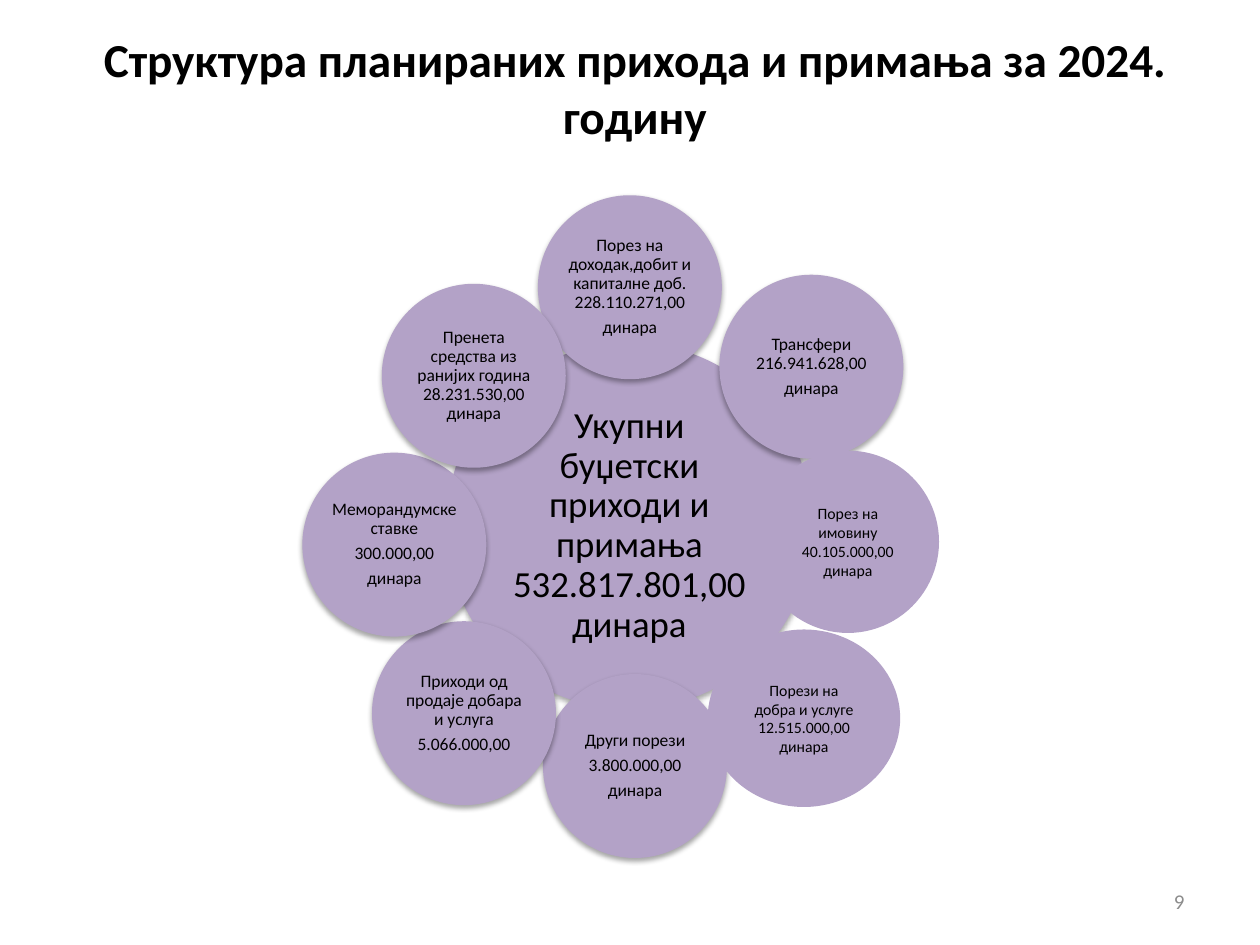
from dataclasses import dataclass

from lxml import etree
from pptx import Presentation
from pptx.dml.color import RGBColor
from pptx.enum.shapes import MSO_SHAPE
from pptx.enum.text import MSO_ANCHOR, MSO_AUTO_SIZE, PP_ALIGN
from pptx.oxml.ns import qn
from pptx.util import Pt

ELLIPSE = MSO_SHAPE.OVAL
MIDDLE = MSO_ANCHOR.MIDDLE
NO_FIT = MSO_AUTO_SIZE.NONE
CENTER = PP_ALIGN.CENTER
RIGHT = PP_ALIGN.RIGHT

FONT = "Calibri"
COLORS = {"text": "000000", "circle": "B3A2C7", "number": "8C8C8C", "shadow": "000000"}
PETAL = 105.1


@dataclass(frozen=True)
class Circle:
    left: float
    top: float
    lines: tuple[str, ...]
    width: float = PETAL
    height: float = PETAL
    size: float = 10
    inset: float = 0.7
    raised: bool = True


CIRCLES = (
    Circle(254.9, 195.8, ("Укупни буџетски приходи и примања 532.817.801,00 динара",),
           209.5, 209.5, 21, 2),
    Circle(307.4, 111.6, ("Порез на доходак,добит и капиталне доб. 228.110.271,00", "динара")),
    Circle(411.1, 157, ("Трансфери 216.941.628,00", "динара")),
    Circle(310.3, 385.2, ("Други порези", "3.800.000,00", "динара")),
    Circle(212.6, 355, ("Приходи од продаје добара и услуга", "5.066.000,00")),
    Circle(172.8, 258.7, ("Mеморандумске ставке", "300.000,00", "динара")),
    Circle(218.2, 162.2, ("Пренета средства из ранијих година 28.231.530,00 динара",)),
    Circle(433.4, 258.5, ("Порез на имовину", "40.105.000,00 динара"),
           102.2, 102.2, 9, 7.2, False),
    Circle(405.4, 360.7, ("Порези на добра и услуге", "12.515.000,00 динара"),
           108, 99.4, 9, 7.2, False),
)


def color(name: str) -> RGBColor:
    return RGBColor.from_string(COLORS[name])


def write(frame, lines: tuple[str, ...], size: float, align, ink: str = "text",
          bold: bool = False) -> None:
    frame.text = "\n".join(lines)
    frame.word_wrap = True
    frame.auto_size = NO_FIT
    frame.vertical_anchor = MIDDLE
    for para in frame.paragraphs:
        para.alignment = align
        for span in para.runs:
            span.font.name = FONT
            span.font.size = Pt(size)
            span.font.bold = bold
            span.font.color.rgb = color(ink)


def add_shadow(shape) -> None:
    effects = shape._element.spPr.find(qn("a:effectLst"))
    shadow = etree.SubElement(effects, qn("a:outerShdw"), blurRad=str(Pt(3.1)),
                              dist=str(Pt(1.8)), dir="5400000", rotWithShape="0")
    shade = etree.SubElement(shadow, qn("a:srgbClr"), val=COLORS["shadow"])
    etree.SubElement(shade, qn("a:alpha"), val="35000")


def draw_circle(page, circle: Circle) -> None:
    shape = page.shapes.add_shape(ELLIPSE, Pt(circle.left), Pt(circle.top),
                                  Pt(circle.width), Pt(circle.height))
    shape.fill.solid()
    shape.fill.fore_color.rgb = color("circle")
    shape.shadow.inherit = False
    frame = shape.text_frame
    write(frame, circle.lines, circle.size, CENTER)
    frame.margin_left = frame.margin_right = Pt(circle.inset)
    frame.margin_top = frame.margin_bottom = Pt(min(circle.inset, 3.6))
    if circle.raised:
        shape.line.fill.background()
        add_shadow(shape)
        for para in frame.paragraphs:
            para.line_spacing = 0.9
            para.space_after = Pt(0.35 * circle.size)
    else:
        shape.line.color.rgb = color("circle")
        shape.line.width = Pt(2)


def main() -> None:
    deck = Presentation()
    deck.slide_width, deck.slide_height = Pt(720), Pt(540)
    page = deck.slides.add_slide(deck.slide_layouts[5])

    title = page.shapes.title
    title.left, title.top, title.width, title.height = Pt(38.9), Pt(19.4), Pt(648), Pt(61.2)
    write(title.text_frame, ("Структура планираних прихода и примања за 2024. годину",),
          27, CENTER, bold=True)

    number = page.shapes.add_textbox(Pt(516.2), Pt(500.4), Pt(167.8), Pt(28.8))
    write(number.text_frame, ("9",), 12, RIGHT, "number")

    for circle in CIRCLES:
        draw_circle(page, circle)
    deck.save("out.pptx")


if __name__ == "__main__":
    main()
